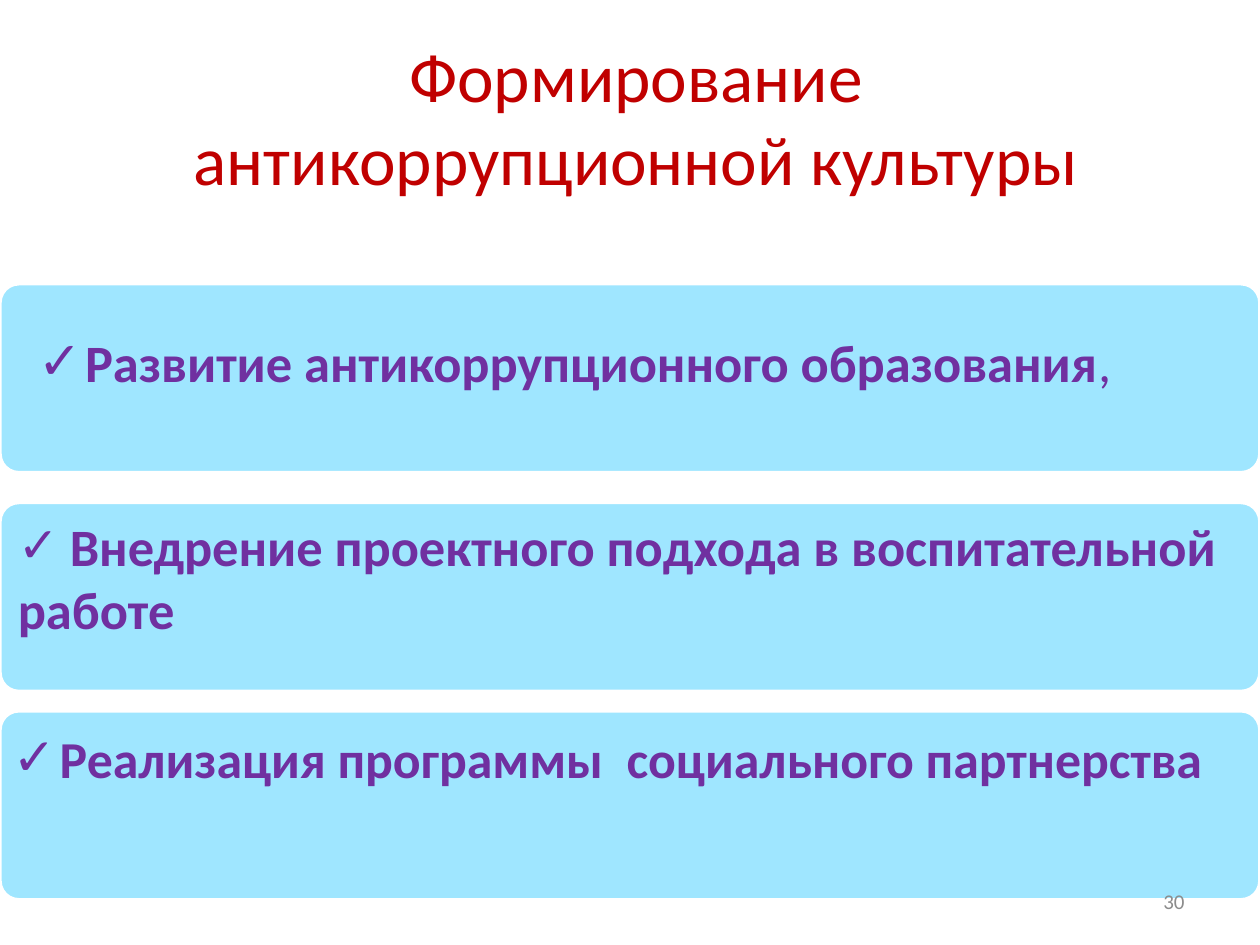
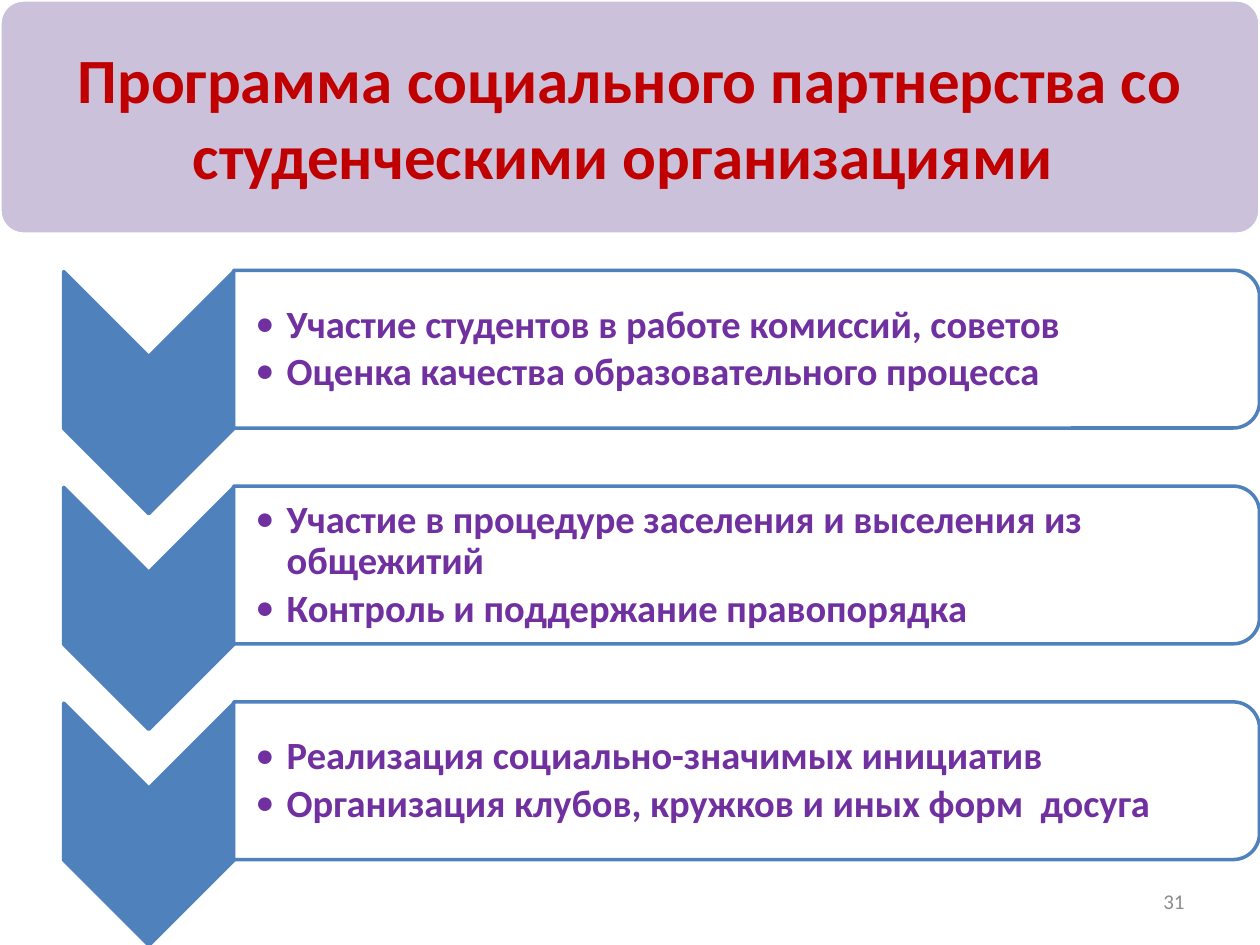
import pptx
import pptx.util
import pptx.dml.color
import pptx.enum.shapes
import pptx.enum.text
import pptx.oxml
import pptx.oxml.ns

Cm, Pt = pptx.util.Cm, pptx.util.Pt
KIND = pptx.enum.shapes.MSO_SHAPE
ALIGN = pptx.enum.text.PP_ALIGN
ANCHOR = pptx.enum.text.MSO_ANCHOR
FIT = pptx.enum.text.MSO_AUTO_SIZE

# Shared colours
RED, VIOLET, GREY = "C00000", "7030A0", "8C8C8C"
SKY, LILAC, BLUE, WHITE = "9FE6FF", "CCC1DA", "4F81BD", "FFFFFF"


def paint(slide, kind, box, fill, line):
    """Add a filled shape; colours are hex strings."""
    shape = slide.shapes.add_shape(kind, *[Cm(n) for n in box])
    shape.shadow.inherit = False
    shape.fill.solid()
    shape.fill.fore_color.rgb = pptx.dml.color.RGBColor.from_string(fill)
    shape.line.color.rgb = pptx.dml.color.RGBColor.from_string(line)
    shape.line.width = Pt(2)
    if kind == KIND.ROUNDED_RECTANGLE:
        shape.adjustments[0] = 0.1
    return shape


def write(shape, paras, color, align, anchor, box=None, mark=None, indent=0):
    """Fill a shape with paragraphs, each a list of (text, size, bold) runs."""
    if box:
        shape.left, shape.top, shape.width, shape.height = [Cm(n) for n in box]
        # Bring the text in front of what is already there
        tree = shape.element.getparent()
        tree.append(shape.element)
    frame = shape.text_frame
    frame.word_wrap = True
    frame.auto_size = FIT.NONE
    frame.vertical_anchor = anchor
    for i, runs in enumerate(paras):
        para = frame.add_paragraph() if i else frame.paragraphs[0]
        para.alignment = align
        if mark:
            props = para._p.get_or_add_pPr()
            props.set("marL", str(Cm(indent)))
            props.set("indent", str(-Cm(indent)))
            font = pptx.oxml.parse_xml(
                f'<a:buFont {pptx.oxml.ns.nsdecls("a")} typeface="Calibri"/>')
            char = pptx.oxml.parse_xml(
                f'<a:buChar {pptx.oxml.ns.nsdecls("a")} char="{mark}"/>')
            props.extend([font, char])
        for text, size, bold in runs:
            if text == "\n":
                para.add_line_break()
                continue
            run = para.add_run()
            run.text = text
            run.font.name = "Calibri"
            run.font.size = Pt(size)
            run.font.bold = bold
            run.font.color.rgb = pptx.dml.color.RGBColor.from_string(color)
    return frame


deck = pptx.Presentation()
deck.slide_width, deck.slide_height = Cm(25.4), Cm(19.05)

# Slide 1: three bands with ticked goals
goals = deck.slides.add_slide(deck.slide_layouts[3])
bands = [paint(goals, KIND.ROUNDED_RECTANGLE, (0, top, 25.4, 3.81), SKY, WHITE)
         for top in (5.72, 10.13, 14.33)]
ticks = [
    (1, (0.51, 6.53, 22.61, 3),
     [("Развитие антикоррупционного образования", 30, True), (",", 30, False)]),
    (2, (0, 14.53, 25.4, 2.59),
     [("Реализация программы  социального партнерства", 29.6, True)]),
]
for key, box, runs in ticks:
    write(goals.placeholders[key], [runs], VIOLET, ALIGN.LEFT, ANCHOR.TOP,
          box, "✓", 0.95)
write(bands[1], [[(" ", 28, True),
                  ("Внедрение проектного подхода в воспитательной работе", 30, True)]],
      VIOLET, ALIGN.LEFT, ANCHOR.TOP, mark="✓")
write(goals.shapes.title,
      [[("Формирование ", 39.6, False), ("\n", 0, False),
        ("антикоррупционной культуры ", 39.6, False)]],
      RED, ALIGN.CENTER, ANCHOR.MIDDLE, (1.27, 0.76, 23.42, 3.18))

# Slide 2: title band
plan = deck.slides.add_slide(deck.slide_layouts[4])
paint(plan, KIND.ROUNDED_RECTANGLE, (0, 0, 25.4, 4.72), LILAC, WHITE)
write(plan.shapes.title,
      [[("Программа социального партнерства со студенческими организациями ",
         36, True)]],
      RED, ALIGN.CENTER, ANCHOR.MIDDLE, (0, 0.76, 25.4, 3.18))

# Slide 2: chevrons with lists
steps = [
    ["Участие студентов в работе комиссий, советов",
     "Оценка качества образовательного процесса"],
    ["Участие в процедуре заселения и выселения из общежитий",
     "Контроль и поддержание правопорядка"],
    ["Реализация социально-значимых инициатив",
     "Организация клубов, кружков и иных форм  досуга"],
]
for i, lines in enumerate(steps):
    drop = i * 4.35
    arrow = paint(plan, KIND.CHEVRON, (0.56, 6.2 + drop, 4.88, 3.43), BLUE, BLUE)
    panel = paint(plan, KIND.ROUND_2_SAME_RECTANGLE,
                  (13.46, -3.3 + drop, 3.18, 20.68), WHITE, BLUE)
    arrow.rotation = panel.rotation = 90
    tint = panel.fill._xPr.find(".//" + pptx.oxml.ns.qn("a:srgbClr"))
    tint.append(pptx.oxml.parse_xml(
        f'<a:alpha {pptx.oxml.ns.nsdecls("a")} val="90000"/>'))
    frame = write(plan.placeholders[i + 1], [[(line, 22, True)] for line in lines],
                  VIOLET, ALIGN.LEFT, ANCHOR.MIDDLE,
                  (4.72, 5.61 + drop, 20.52, 2.87), "•", 0.63)
    frame.margin_left = Cm(0.43)
    frame.margin_top = frame.margin_right = frame.margin_bottom = Cm(0.05)
    for para in frame.paragraphs:
        para.line_spacing = 0.9
        para.space_before, para.space_after = Pt(0), Pt(3.3)
spare = plan.placeholders[4].element
spare.getparent().remove(spare)

# Page numbers
for page, slide in enumerate(deck.slides, 30):
    box = (18.21, 17.65, 5.92, 1.02)
    note = slide.shapes.add_textbox(*[Cm(n) for n in box])
    write(note, [[(str(page), 12, False)]], GREY, ALIGN.RIGHT, ANCHOR.MIDDLE)

deck.save("out.pptx")
